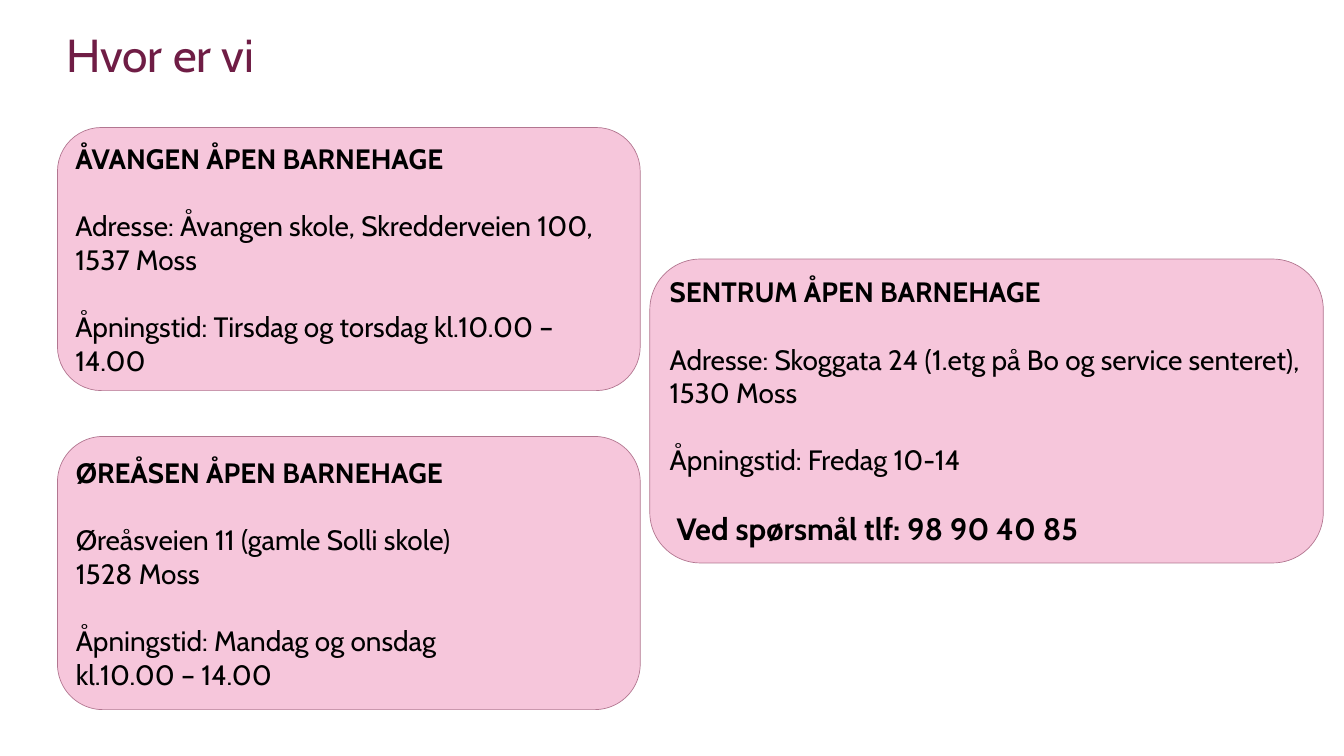
"""Build the slide "Hvor er vi" with one rounded card per open kindergarten."""
from pptx import Presentation
from pptx.dml.color import RGBColor
from pptx.enum.shapes import MSO_SHAPE
from pptx.enum.text import MSO_ANCHOR, MSO_AUTO_SIZE, PP_ALIGN
from pptx.util import Inches, Pt

COLORS = {"title": "6F1D45", "card": "F6C6DB", "border": "B27690", "text": "000000"}
FORMATS = {
    "title": {"name": "Cabin", "size": Pt(66), "bold": False},
    "heading": {"name": "Cabin", "size": Pt(40), "bold": True},
    "body": {"name": "Cabin", "size": Pt(40), "bold": False},
    "phone": {"name": "Cabin", "size": Pt(44), "bold": True},
}
FRAME = {"word_wrap": True, "auto_size": MSO_AUTO_SIZE.NONE, "vertical_anchor": MSO_ANCHOR.MIDDLE}
GAP = Pt(48)
CARDS = [
    ((1.14, 2.53, 11.56, 5.22), [
        ("ÅVANGEN ÅPEN BARNEHAGE", "heading", 0),
        ("Adresse: Åvangen skole, Skredderveien 100, 1537 Moss", "body", GAP),
        ("Åpningstid: Tirsdag og torsdag kl.10.00 – 14.00", "body", GAP),
    ]),
    ((12.89, 5.14, 13.36, 6.03), [
        ("SENTRUM ÅPEN BARNEHAGE", "heading", 0),
        ("Adresse: Skoggata 24 (1.etg på Bo og service senteret), 1530 Moss", "body", GAP),
        ("Åpningstid: Fredag 10-14", "body", GAP),
        (" Ved spørsmål tlf: 98 90 40 85", "phone", GAP),
    ]),
    ((1.14, 8.66, 11.56, 5.42), [
        ("ØREÅSEN ÅPEN BARNEHAGE", "heading", 0),
        ("Øreåsveien 11 (gamle Solli skole)", "body", GAP),
        ("1528 Moss", "body", 0),
        ("Åpningstid: Mandag og onsdag", "body", GAP),
        ("kl.10.00 – 14.00", "body", 0),
    ]),
]


def write(para, text, style, color, space=0):
    para.alignment = PP_ALIGN.LEFT
    para.space_before = space
    span = para.add_run()
    span.text = text
    for key, value in FORMATS[style].items():
        setattr(span.font, key, value)
    span.font.color.rgb = RGBColor.from_string(COLORS[color])


deck = Presentation()
deck.slide_width, deck.slide_height = Inches(26.66), Inches(15)
page = deck.slides.add_slide(deck.slide_layouts[5])

title = page.shapes.title
title.left, title.top, title.width, title.height = map(Inches, (1.31, 0.53, 23.52, 1.1))
for key, value in FRAME.items():
    setattr(title.text_frame, key, value)
for side in ("left", "top", "right", "bottom"):
    setattr(title.text_frame, f"margin_{side}", 0)
write(title.text_frame.paragraphs[0], "Hvor er vi", "title", "title")

for place, lines in CARDS:
    card = page.shapes.add_shape(MSO_SHAPE.ROUNDED_RECTANGLE, *map(Inches, place))
    card.shadow.inherit = False
    card.fill.solid()
    card.fill.fore_color.rgb = RGBColor.from_string(COLORS["card"])
    card.line.color.rgb = RGBColor.from_string(COLORS["border"])
    card.line.width = Pt(1)
    for key, value in FRAME.items():
        setattr(card.text_frame, key, value)
    for index, (text, style, space) in enumerate(lines):
        para = card.text_frame.add_paragraph() if index else card.text_frame.paragraphs[0]
        write(para, text, style, "text", space)

deck.save("out.pptx")
